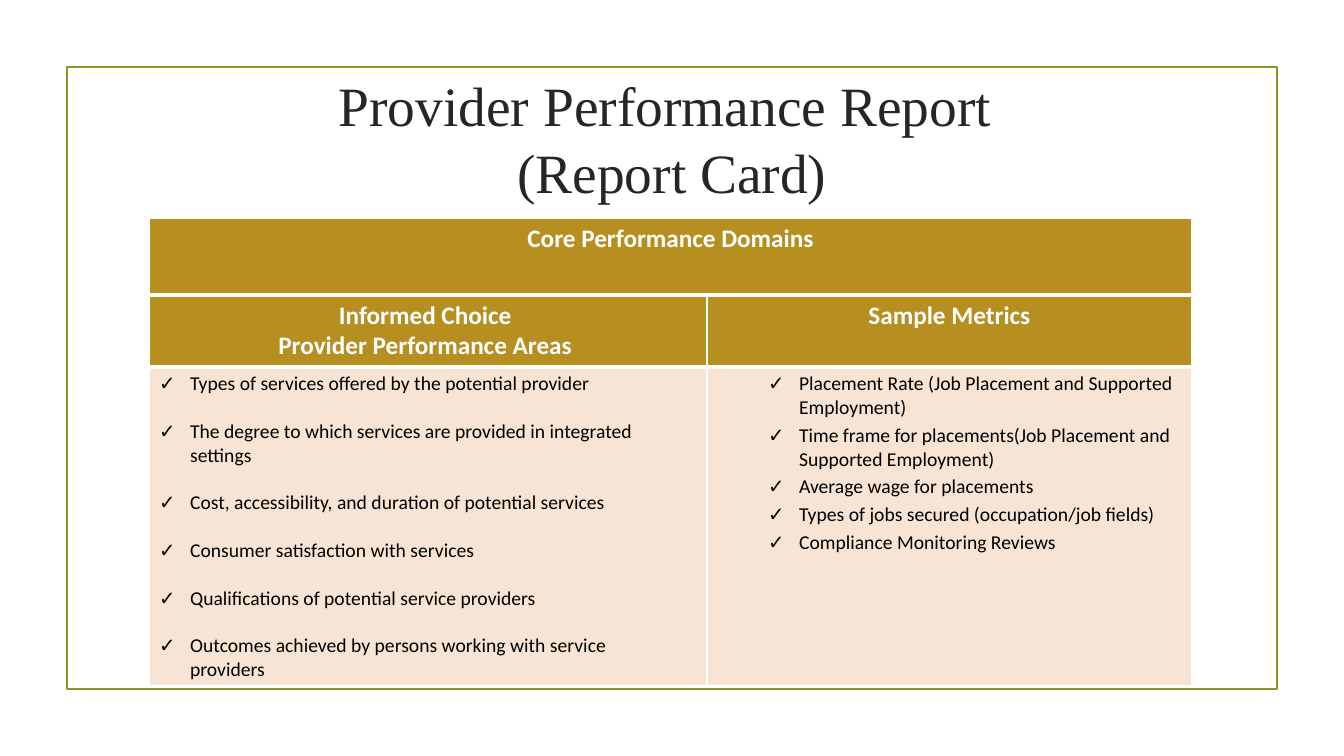
from lxml import etree
from pptx import Presentation
from pptx import util as u
from pptx.dml.color import RGBColor
from pptx.enum import shapes, text
from pptx.oxml.ns import qn

TITLE = "Provider Performance Report \v(Report Card)"
BANNER = ["Core Performance Domains"]
HEADINGS = [["Informed Choice ", "Provider Performance Areas "], ["Sample Metrics"]]
AREAS = [
    "Types of services offered by the potential provider",
    "The degree to which services are provided in integrated settings",
    "Cost, accessibility, and duration of potential services",
    "Consumer satisfaction with services",
    "Qualifications of potential service providers",
    "Outcomes achieved by persons working with service \vproviders",
]
METRICS = [
    "Placement Rate (Job Placement and Supported Employment)",
    "Time frame for placements(Job Placement and Supported Employment)",
    "Average wage for placements",
    "Types of jobs secured (occupation/job fields)",
    "Compliance Monitoring Reviews",
]

PX = 914400 / 100.8
SLIDE = (1344, 756)
FRAME = (67, 67, 1210, 622)
TITLE_BOX = (143, 62, 1058, 152)
TABLE_AT = (149, 218)
COLUMNS = (558, 485)
ROWS = (77, 72, 319)
HANG = 31

THEME = {
    "frame": RGBColor.from_string("83992A"),
    "header": RGBColor.from_string("B78E20"),
    "body": RGBColor.from_string("F7E4D4"),
    "title_font": {"name": "Times New Roman", "size": u.Pt(39.6), "color": RGBColor.from_string("262626")},
    "header_font": {"name": "Calibri", "size": u.Pt(18), "bold": True, "color": RGBColor.from_string("FFFFFF")},
    "body_font": {"name": "Calibri", "size": u.Pt(14), "bold": False, "color": RGBColor.from_string("000000")},
    "rule": "FFFFFF",
    "thin": 1,
    "thick": 3,
}
CENTRED = {"alignment": text.PP_ALIGN.CENTER}


def px(*lengths):
    return [u.Emu(round(length * PX)) for length in lengths]


def write(frame, lines, font, layout, gap=0, indent=None):
    """Fill a text frame; an indent (px) makes each line a ticked item."""
    for index, line in enumerate(lines):
        para = frame.paragraphs[0] if index == 0 else frame.add_paragraph()
        para.text = line
        for name, value in layout.items():
            setattr(para, name, value)
        if index and gap:
            para.space_before = u.Pt(gap)
        if indent is not None:
            props = para._p.get_or_add_pPr()
            margin, hang = px(indent, -HANG)
            props.set("marL", str(margin))
            props.set("indent", str(hang))
            etree.SubElement(props, qn("a:buFont"), typeface=font["name"])
            etree.SubElement(props, qn("a:buChar"), char="✓")
        for run in para.runs:
            for name, value in font.items():
                if name == "color":
                    run.font.color.rgb = value
                else:
                    setattr(run.font, name, value)


def rule_cell(cell, top, bottom):
    props = cell._tc.get_or_add_tcPr()
    widths = {"lnL": THEME["thin"], "lnR": THEME["thin"], "lnT": top, "lnB": bottom}
    for side, width in widths.items():
        line = etree.SubElement(props, qn(f"a:{side}"), w=str(u.Pt(width)))
        fill = etree.SubElement(line, qn("a:solidFill"))
        etree.SubElement(fill, qn("a:srgbClr"), val=THEME["rule"])


def add_frame(slide):
    frame = slide.shapes.add_shape(shapes.MSO_SHAPE.RECTANGLE, *px(*FRAME))
    frame.shadow.inherit = False
    frame.fill.background()
    frame.line.color.rgb = THEME["frame"]
    frame.line.width = u.Pt(1.25)


def add_title(slide):
    title = slide.shapes.add_textbox(*px(*TITLE_BOX)).text_frame
    title.word_wrap = True
    title.vertical_anchor = text.MSO_ANCHOR.MIDDLE
    write(title, [TITLE], THEME["title_font"], CENTRED)


def add_report_card(slide):
    size = (sum(COLUMNS), sum(ROWS))
    card = slide.shapes.add_table(len(ROWS), len(COLUMNS), *px(*TABLE_AT, *size)).table
    card.first_row = card.horz_banding = False
    for column, width in zip(card.columns, px(*COLUMNS)):
        column.width = width
    for row, height in zip(card.rows, px(*ROWS)):
        row.height = height

    last = len(ROWS) - 1
    for r in range(len(ROWS)):
        for c in range(len(COLUMNS)):
            cell = card.cell(r, c)
            rule_cell(cell, THEME["thick" if r else "thin"], THEME["thin" if r == last else "thick"])
            cell.fill.solid()
            cell.fill.fore_color.rgb = THEME["body" if r == last else "header"]

    card.cell(0, 0).merge(card.cell(0, 1))
    write(card.cell(0, 0).text_frame, BANNER, THEME["header_font"], CENTRED)
    for c, heading in enumerate(HEADINGS):
        write(card.cell(1, c).text_frame, heading, THEME["header_font"], CENTRED)
    for c, (items, gap, indent) in enumerate([(AREAS, 17, HANG), (METRICS, 2.8, 82)]):
        write(card.cell(last, c).text_frame, items, THEME["body_font"], {}, gap, indent)


def main():
    deck = Presentation()
    deck.slide_width, deck.slide_height = px(*SLIDE)
    slide = deck.slides.add_slide(deck.slide_layouts[6])
    add_frame(slide)
    add_title(slide)
    add_report_card(slide)
    deck.save("out.pptx")


if __name__ == "__main__":
    main()
